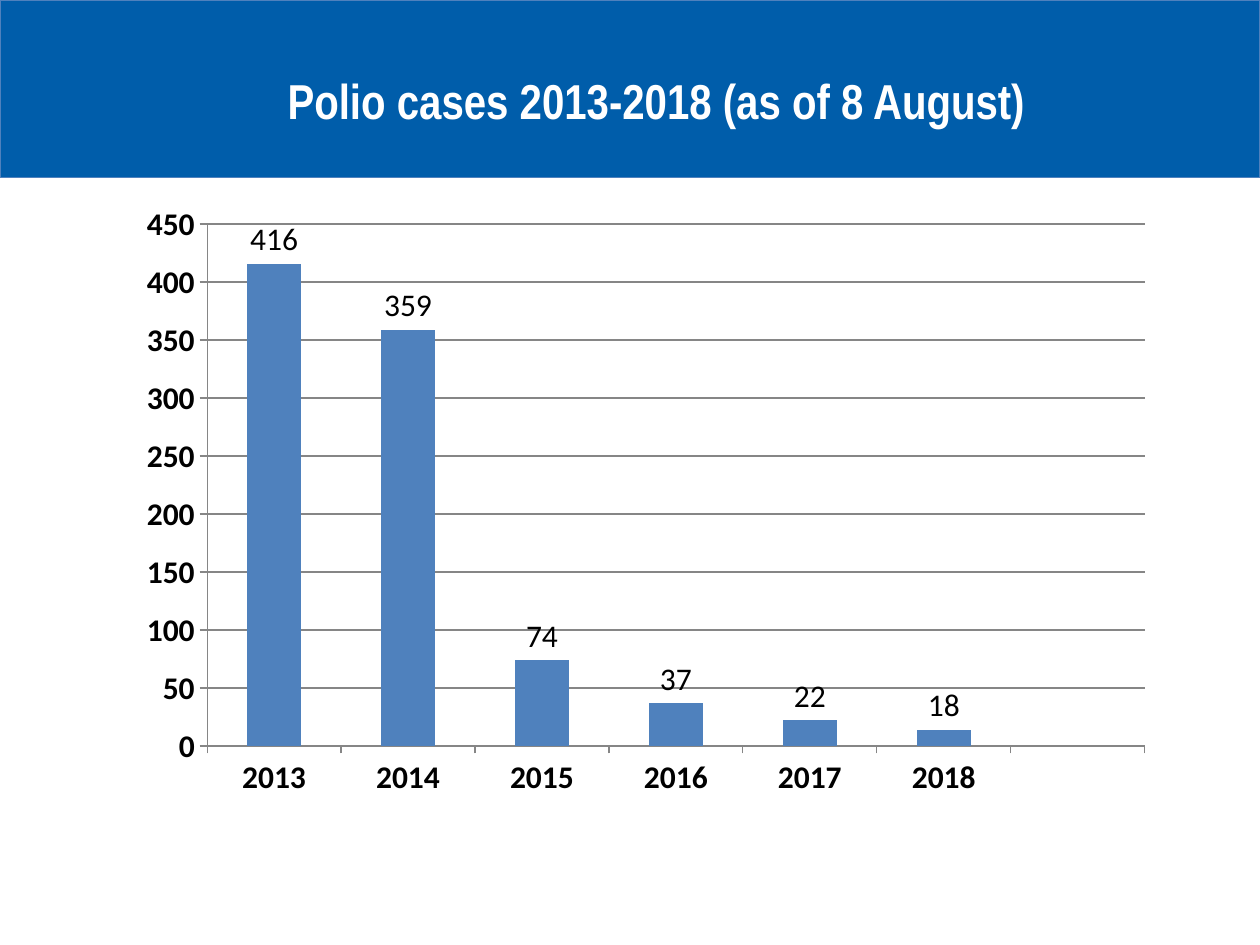
from pptx import Presentation
from pptx import util as u
from pptx.chart import data as chart_data
from pptx.dml.color import RGBColor
from pptx.enum import chart as charts, shapes, text

WIDTH, HEIGHT = u.Inches(10), u.Inches(7.5)
COLORS = {"banner": "005DAA", "bar": "4F81BD", "title": "FFFFFF",
          "label": "000000", "grid": "868686"}
CASES = {"2013": 416, "2014": 359, "2015": 74, "2016": 37,
         "2017": 22, "2018": 14, "": None}
LABEL_OVERRIDES = {5: "18"}


def color(key):
    """Return the named colour."""
    return RGBColor.from_string(COLORS[key])


def place(left, top, width, height):
    """Turn shares of the slide's size into a position and size."""
    return (round(left * WIDTH), round(top * HEIGHT),
            round(width * WIDTH), round(height * HEIGHT))


def assign(target, values):
    """Set attributes of the target from a dict."""
    for key, value in values.items():
        setattr(target, key, value)


def style_font(font, color_key, **values):
    """Set a font's colour and its other attributes."""
    assign(font, values)
    font.color.rgb = color(color_key)


def add_banner(slide, area):
    """Add the coloured band behind the title."""
    banner = slide.shapes.add_shape(shapes.MSO_SHAPE.RECTANGLE, *area)
    banner.shadow.inherit = False
    banner.fill.solid()
    banner.fill.fore_color.rgb = color("banner")
    banner.line.color.rgb = color("bar")
    banner.line.width = u.Pt(0.75)


def add_title(slide, area, wording):
    """Add the centred slide title."""
    frame = slide.shapes.add_textbox(*area).text_frame
    assign(frame, {"word_wrap": True, "vertical_anchor": text.MSO_ANCHOR.MIDDLE})
    title = frame.paragraphs[0]
    title.alignment = text.PP_ALIGN.CENTER
    run = title.add_run()
    run.text = wording
    style_font(run.font, "title", name="Arial Narrow", size=u.Pt(28), bold=True)


def style_axis(axis):
    """Give an axis outward ticks, bold labels and a grey line."""
    axis.major_tick_mark = charts.XL_TICK_MARK.OUTSIDE
    axis.format.line.color.rgb = color("grid")
    style_font(axis.tick_labels.font, "label", name="Calibri", size=u.Pt(18), bold=True)


def add_cases_chart(slide, area):
    """Add the column chart of yearly cases."""
    yearly = chart_data.CategoryChartData()
    yearly.categories = list(CASES)
    yearly.add_series("Series 1", CASES.values())
    chart = slide.shapes.add_chart(
        charts.XL_CHART_TYPE.COLUMN_CLUSTERED, *area, yearly).chart
    assign(chart, {"has_legend": False, "has_title": False})
    label_font = {"name": "Calibri", "size": u.Pt(18), "bold": False}
    style_font(chart.font, "label", **label_font)

    for axis in (chart.category_axis, chart.value_axis):
        style_axis(axis)
    assign(chart.value_axis, {"minimum_scale": 0, "maximum_scale": 450,
                              "major_unit": 50, "has_major_gridlines": True})
    chart.value_axis.major_gridlines.format.line.color.rgb = color("grid")

    plot = chart.plots[0]
    assign(plot, {"gap_width": 150, "vary_by_categories": False})
    cases = plot.series[0]
    cases.format.fill.solid()
    cases.format.fill.fore_color.rgb = color("bar")
    above = charts.XL_LABEL_POSITION.OUTSIDE_END
    assign(cases.data_labels, {"show_value": True, "position": above})
    style_font(cases.data_labels.font, "label", **label_font)
    for index, wording in LABEL_OVERRIDES.items():
        label = cases.points[index].data_label
        run = label.text_frame.paragraphs[0].add_run()
        run.text = wording
        style_font(run.font, "label", **label_font)
        label.position = above


def main():
    """Build and save the slide."""
    deck = Presentation()
    assign(deck, {"slide_width": WIDTH, "slide_height": HEIGHT})
    slide = deck.slides.add_slide(deck.slide_layouts[6])
    add_banner(slide, place(0, 0, 1, 0.188))
    add_title(slide, place(0.05, 0.067, 0.95, 0.077),
              "Polio cases 2013-2018 (as of 8 August) ")
    add_cases_chart(slide, place(0.1, 0.204, 0.825, 0.652))
    deck.save("out.pptx")


if __name__ == "__main__":
    main()
